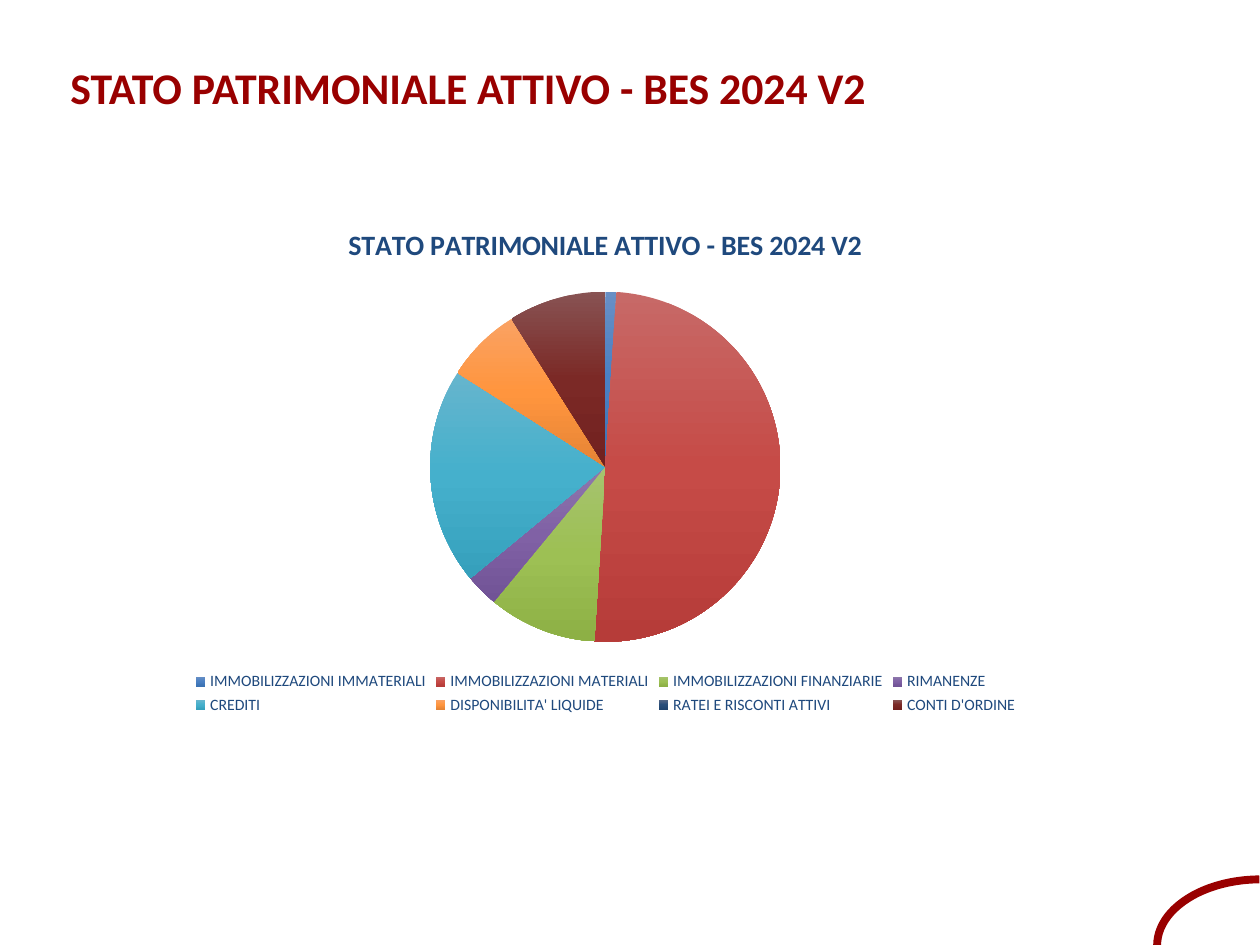
"""Builds the balance sheet assets slide with its pie chart."""
from copy import deepcopy
from dataclasses import dataclass

from lxml.etree import SubElement
from pptx import Presentation
from pptx.chart.data import CategoryChartData
from pptx.dml.color import RGBColor
from pptx.enum.chart import XL_CHART_TYPE, XL_LEGEND_POSITION
from pptx.enum.shapes import MSO_SHAPE
from pptx.enum.text import MSO_ANCHOR
from pptx.oxml import parse_xml
from pptx.oxml.ns import nsdecls, qn
from pptx.util import Inches, Pt

HEADING = "STATO PATRIMONIALE ATTIVO - BES 2024 V2"
ASSETS = [
    ("IMMOBILIZZAZIONI IMMATERIALI", 1, ("688FC5", "4A80C3", "3B72B3")),
    ("IMMOBILIZZAZIONI MATERIALI", 50, ("C76967", "C64B47", "B63C39")),
    ("IMMOBILIZZAZIONI FINANZIARIE", 10, ("A6C36F", "9DC054", "8DB045")),
    ("RIMANENZE", 3, ("8E78AC", "8061A5", "715396")),
    ("CREDITI", 20, ("66B5CD", "45B0CC", "36A0BC")),
    ("DISPONIBILITA' LIQUIDE", 7, ("FAA263", "FF953E", "E58435")),
    ("RATEI E RISCONTI ATTIVI", 0, ("536686", "284D79", "20446E")),
    ("CONTI D'ORDINE", 9, ("885353", "7B2926", "71211F")),
]


@dataclass(frozen=True)
class Theme:
    font: str = "Calibri"
    accent: str = "990000"
    chart_text: str = "1F497D"
    text: str = "000000"
    paper: str = "FFFFFF"
    heading_size: float = 25
    chart_title_size: float = 16
    chart_size: float = 10
    legend_size: float = 9
    arc_width: float = 4.5


class SlideBuilder:
    def __init__(self, deck, theme):
        self.deck = deck
        self.theme = theme
        self.page = deck.slides.add_slide(deck.slide_layouts[6])

    def place(self, left, top, width, height):
        wide, high = self.deck.slide_width, self.deck.slide_height
        return [int(share * side) for share, side in
                zip((left, top, width, height), (wide, high, wide, high))]

    def style(self, font, size, color, bold=False):
        font.name, font.size, font.bold = self.theme.font, Pt(size), bold
        font.color.rgb = RGBColor.from_string(color)

    def corner_arc(self, area, start, end):
        arc = self.page.shapes.add_shape(MSO_SHAPE.ARC, *self.place(*area))
        arc.shadow.inherit = False
        arc.rotation = 270
        arc.adjustments[0], arc.adjustments[1] = start, end
        arc.fill.background()
        arc.line.color.rgb = RGBColor.from_string(self.theme.accent)
        arc.line.width = Pt(self.theme.arc_width)

    def heading(self, area, text):
        box = self.page.shapes.add_textbox(*self.place(*area))
        box.fill.solid()
        box.fill.fore_color.rgb = RGBColor.from_string(self.theme.paper)
        shade = box.element.spPr.find(qn("a:solidFill"))[0]
        SubElement(shade, qn("a:alpha"), val="50000")
        frame = box.text_frame
        frame.word_wrap = True
        frame.vertical_anchor = MSO_ANCHOR.TOP
        frame.margin_left, frame.margin_right = Inches(0.56), 0
        frame.margin_top, frame.margin_bottom = Inches(0.08), Inches(0.04)
        para = frame.paragraphs[0]
        para.line_spacing = 0.93
        span = para.add_run()
        span.text = text
        self.style(span.font, self.theme.heading_size, self.theme.accent, True)

    def pie(self, area, plot_area, title, rows):
        theme = self.theme
        data = CategoryChartData()
        data.categories = [name for name, _, _ in rows]
        data.add_series("Series 1", [value for _, value, _ in rows])
        chart = self.page.shapes.add_chart(
            XL_CHART_TYPE.PIE, *self.place(*area), data).chart
        self.style(chart.font, theme.chart_size, theme.text)
        chart.has_title = True
        span = chart.chart_title.text_frame.paragraphs[0].add_run()
        span.text = title
        self.style(span.font, theme.chart_title_size, theme.chart_text, True)
        chart.has_legend = True
        chart.legend.position = XL_LEGEND_POSITION.BOTTOM
        chart.legend.include_in_layout = False
        self.style(chart.legend.font, theme.legend_size, theme.chart_text)
        plot = chart.plots[0]
        plot.vary_by_categories = True
        for index, (_, _, colors) in enumerate(rows):
            self.slice_gradient(chart, plot.series[0].points[index], index, colors)
        self.chart_frame(chart, plot_area)

    def slice_gradient(self, chart, point, index, colors):
        fill = point.format.fill
        fill.gradient()
        fill.gradient_angle = 270
        stops = chart.element.xpath(".//c:dPt//a:gsLst")[index]
        stops.insert(1, deepcopy(stops[0]))
        for stop, position, color in zip(fill.gradient_stops, (0, 0.5, 1), colors):
            stop.position = position
            stop.color.rgb = RGBColor.from_string(color)
        point.format.line.fill.background()

    def chart_frame(self, chart, plot_area):
        chart.element.find(qn("c:txPr")).addprevious(parse_xml(
            f'<c:spPr {nsdecls("c", "a")}><a:solidFill>'
            f'<a:srgbClr val="{self.theme.paper}"/></a:solidFill>'
            '<a:ln><a:noFill/></a:ln></c:spPr>'))
        plot = chart.element.find(qn("c:chart")).find(qn("c:plotArea"))
        layout = plot.find(qn("c:layout"))
        if layout is None:
            layout = parse_xml(f'<c:layout {nsdecls("c")}/>')
            plot.insert(0, layout)
        manual = SubElement(layout, qn("c:manualLayout"))
        settings = dict(layoutTarget="inner", xMode="edge", yMode="edge")
        settings.update(zip("xywh", map(str, plot_area)))
        for name, value in settings.items():
            SubElement(manual, qn(f"c:{name}"), val=value)


def main():
    deck = Presentation()
    deck.slide_width, deck.slide_height = Inches(10), Inches(7.5)
    slide = SlideBuilder(deck, Theme())
    slide.corner_arc((0.948, 0.891, 0.105, 0.219), 162, 215.34)
    slide.heading((0, 0.059, 0.943, 0.107), HEADING)
    slide.pie((0.083, 0.216, 0.795, 0.545), (0.32, 0.17, 0.36, 0.68), HEADING, ASSETS)
    deck.save("out.pptx")


if __name__ == "__main__":
    main()
